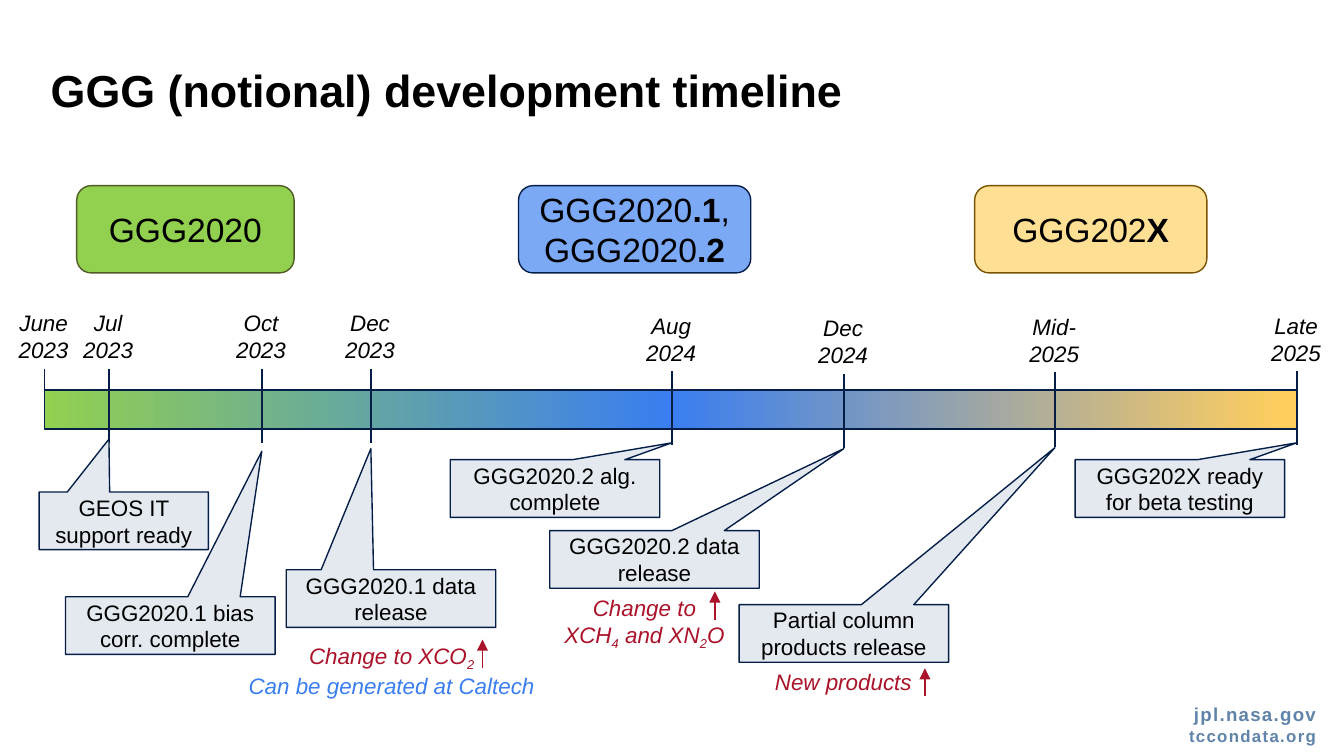
"""Build the GGG development timeline slide."""
from lxml.etree import SubElement
from pptx import Presentation
from pptx.dml.color import RGBColor
from pptx.enum.shapes import MSO_CONNECTOR as Line, MSO_SHAPE as Shape
from pptx.enum.text import MSO_ANCHOR as Anchor, PP_ALIGN as Align
from pptx.oxml.ns import qn
from pptx.util import Cm, Pt

BLACK = RGBColor(0x00, 0x00, 0x00)
NAVY = RGBColor(0x05, 0x1E, 0x48)
RED = RGBColor(0xAA, 0x13, 0x29)
BLUE = RGBColor(0x3A, 0x7E, 0xF0)
SKY = RGBColor(0x7B, 0xA9, 0xF5)
GREEN = RGBColor(0x92, 0xD0, 0x50)
OLIVE = RGBColor(0x52, 0x5A, 0x26)
GOLD = RGBColor(0xFF, 0xCE, 0x5E)
CREAM = RGBColor(0xFF, 0xDF, 0x94)
BROWN = RGBColor(0x79, 0x54, 0x00)
PALE = RGBColor(0xE4, 0xE9, 0xEF)
STEEL = RGBColor(0x60, 0x83, 0xAA)

BOLD = {"bold": True}
SUB = {"baseline": -25000}

VERSIONS = [
    (1.45, 4.11, GREEN, OLIVE, ["GGG2020"]),
    (9.8, 4.39, SKY, NAVY, ["GGG2020", (".1", BOLD), ", GGG2020", (".2", BOLD)]),
    (18.42, 4.39, CREAM, BROWN, ["GGG202", ("X", BOLD)]),
]

# date, tick x, date top, callout text, callout left, top, width, tip y
MILESTONES = [
    ("Oct 2023", 4.95, 5.72, "GGG2020.1 bias corr. complete", 1.24, 11.28, 3.96, 8.53),
    ("Dec 2023", 7.01, 5.72, "GGG2020.1 data release", 5.41, 10.77, 3.96, 8.48),
    ("Aug 2024", 12.7, 5.77, "GGG2020.2 alg. complete", 8.51, 8.69, 3.96, 8.37),
    ("Dec 2024", 15.95, 5.82, "GGG2020.2 data release", 10.39, 10.03, 3.96, 8.48),
    ("Mid- 2025", 19.94, 5.79, "Partial column products release", 13.97, 11.43, 3.96, 8.46),
    ("Late 2025", 24.51, 5.77, "GGG202X ready for beta testing", 20.32, 8.69, 3.96, 8.37),
    ("Jul 2023", 2.06, 5.72, "GEOS IT support ready", 0.74, 9.3, 3.2, 8.3),
]

# left, top, width, height, wrap, paragraphs, arrow x, arrow bottom
NOTES = [
    (4.42, 12.01, 5.97, 1.27, False,
     [["Change to XCO", ("2", SUB)], [("Can be generated at Caltech", {"color": BLUE})]],
     9.12, 12.62),
    (10.39, 11.1, 3.58, 1.27, True,
     [["Change to XCH", ("4", SUB), " and XN", ("2", SUB), "O"]], 13.51, 11.71),
    (14.15, 12.5, 3.58, 0.76, True, [["New products"]], 17.48, 13.16),
]


def write(frame, paragraphs, size=12, color=BLACK, bold=False, italic=False,
          align=Align.CENTER, anchor=Anchor.TOP, wrap=True, spacing=None):
    """Fill a text frame; a run is a string or a (string, overrides) pair."""
    frame.word_wrap = wrap
    frame.vertical_anchor = anchor
    for index, runs in enumerate(paragraphs):
        paragraph = frame.paragraphs[0] if index == 0 else frame.add_paragraph()
        paragraph.alignment = align
        for part in runs:
            words, changes = (part, {}) if isinstance(part, str) else part
            run = paragraph.add_run()
            run.text = words
            font = run.font
            font.name = "Arial"
            font.size = Pt(changes.get("size", size))
            font.bold = changes.get("bold", bold)
            font.italic = italic
            font.color.rgb = changes.get("color", color)
            properties = run._r.get_or_add_rPr()
            if "baseline" in changes:
                properties.set("baseline", str(changes["baseline"]))
            if spacing:
                properties.set("spc", str(spacing))


def add_label(slide, left, top, width, height, paragraphs, **style):
    """Add a text box and return its frame."""
    box = slide.shapes.add_textbox(Cm(left), Cm(top), Cm(width), Cm(height))
    write(box.text_frame, paragraphs, **style)
    return box.text_frame


def add_block(slide, kind, left, top, width, height, fill, outline):
    """Add a flat outlined shape."""
    block = slide.shapes.add_shape(kind, Cm(left), Cm(top), Cm(width), Cm(height))
    block.shadow.inherit = False
    block.fill.solid()
    block.fill.fore_color.rgb = fill
    block.line.color.rgb = outline
    block.line.width = Pt(0.75)
    return block


def add_stroke(slide, x, start, end, color, arrow=False):
    """Add a vertical line, optionally with an arrowhead at its end."""
    stroke = slide.shapes.add_connector(Line.STRAIGHT, Cm(x), Cm(start), Cm(x), Cm(end))
    stroke.line.color.rgb = color
    stroke.line.width = Pt(1)
    properties = stroke._element.spPr
    if arrow:
        SubElement(properties.find(qn("a:ln")), qn("a:tailEnd"), type="triangle")
    SubElement(properties, qn("a:effectLst"))


def add_bar(slide):
    """Add the timeline bar with its three-colour gradient."""
    bar = add_block(slide, Shape.RECTANGLE, 0.84, 7.37, 23.67, 0.74, GREEN, NAVY)
    bar.fill.gradient()
    bar.fill.gradient_angle = 0
    stops = bar._element.spPr.find(".//" + qn("a:gsLst"))
    for stop in list(stops):
        stops.remove(stop)
    for percent, color in ((0, GREEN), (50, BLUE), (99, GOLD)):
        stop = SubElement(stops, qn("a:gs"), pos=str(percent * 1000))
        SubElement(stop, qn("a:srgbClr"), val=str(color))


def add_date(slide, date, x, top, tick_end):
    """Add a date centred over its tick."""
    add_stroke(slide, x, top + 1.25, tick_end, NAVY)
    add_label(slide, x - 0.84, top, 1.65, 1.27, [[date]], italic=True)


def add_callout(slide, words, left, top, width, tip_x, tip_y):
    """Add a callout whose tip points at the given place."""
    height = 1.09
    callout = add_block(slide, Shape.RECTANGULAR_CALLOUT, left, top, width, height, PALE, NAVY)
    callout.adjustments[0] = (tip_x - left) / width - 0.5
    callout.adjustments[1] = (tip_y - top) / height - 0.5
    write(callout.text_frame, [[words]], anchor=Anchor.MIDDLE)


def main():
    """Build and save the slide."""
    deck = Presentation()
    deck.slide_width, deck.slide_height = Cm(25.4), Cm(14.29)
    slide = deck.slides.add_slide(deck.slide_layouts[6])

    add_label(slide, 21.69, 13.11, 3.43, 1.17,
              [["jpl.nasa.gov"], [("tccondata.org", {"size": 9})]], size=10, color=STEEL,
              bold=True, align=Align.RIGHT, anchor=Anchor.MIDDLE, spacing=70)
    title = add_label(slide, 0.71, 0.94, 20.98, 1.19, [["GGG (notional) development timeline"]],
                      size=24, bold=True, align=Align.LEFT)
    title.margin_top = Cm(0.24)

    for left, width, fill, outline, name in VERSIONS:
        version = add_block(slide, Shape.ROUNDED_RECTANGLE, left, 3.51, width, 1.65, fill, outline)
        write(version.text_frame, [name], size=18, anchor=Anchor.MIDDLE)

    add_bar(slide)
    add_date(slide, "June 2023", 0.84, 5.72, 8.08)
    for date, x, date_top, words, left, top, width, tip_y in MILESTONES:
        add_date(slide, date, x, date_top, date_top + 2.65)
        add_callout(slide, words, left, top, width, x, tip_y)

    for left, top, width, height, wrap, paragraphs, arrow_x, arrow_bottom in NOTES:
        add_label(slide, left, top, width, height, paragraphs, color=RED, italic=True, wrap=wrap)
        add_stroke(slide, arrow_x, arrow_bottom, arrow_bottom - 0.53, RED, arrow=True)

    deck.save("out.pptx")


if __name__ == "__main__":
    main()
